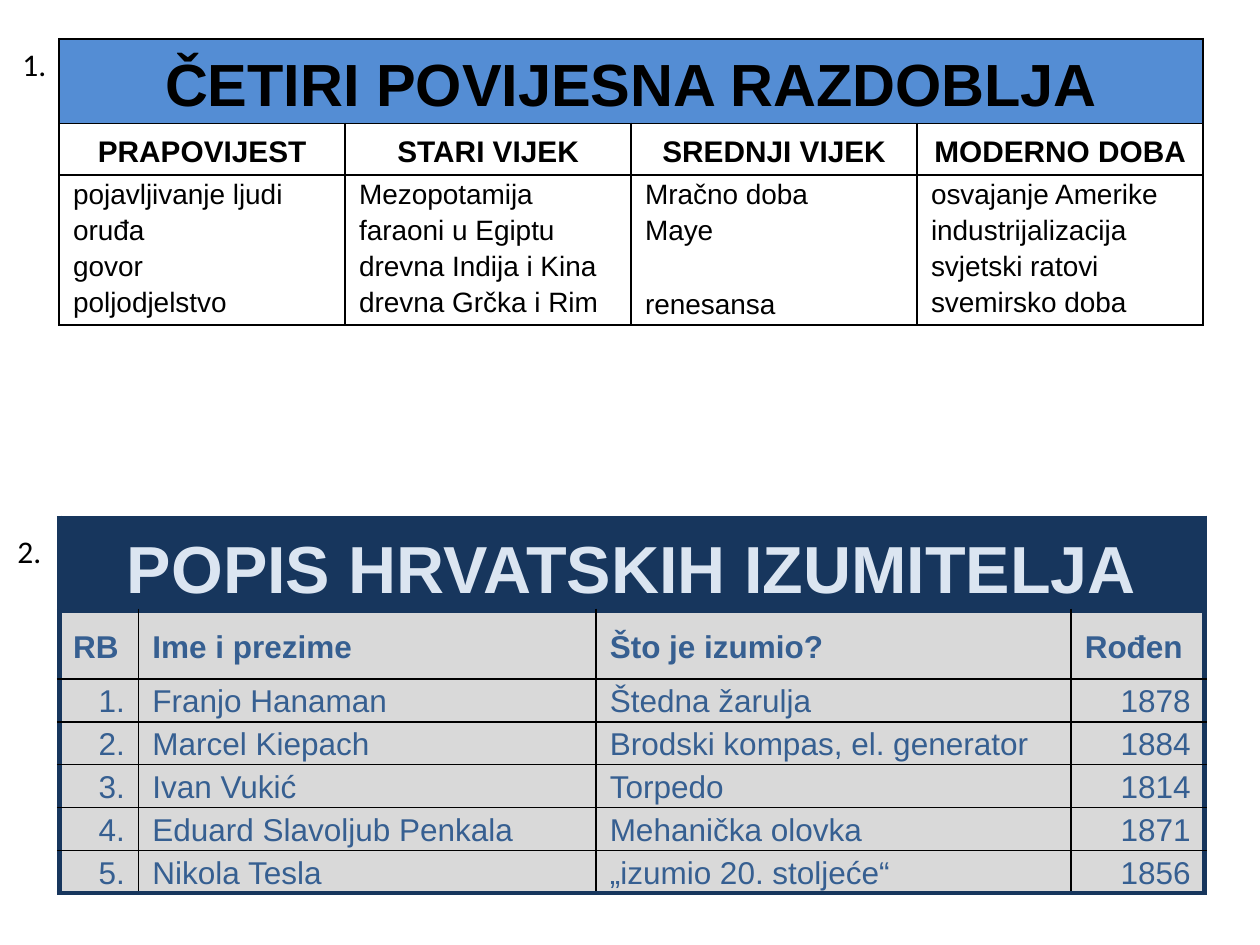
from pptx import Presentation
from pptx.dml.color import RGBColor
from pptx.enum.text import MSO_ANCHOR as Anchor, PP_ALIGN as Align
from pptx.oxml.ns import qn
from pptx.util import Inches, Pt
from lxml.etree import SubElement as Sub

BLACK = "000000"
NAVY = "17365D"
GRAY = "D9D9D9"
THIN = (BLACK, 1)

ERAS = [
    ["ČETIRI POVIJESNA RAZDOBLJA"],
    ["PRAPOVIJEST", "STARI VIJEK", "SREDNJI VIJEK", "MODERNO DOBA"],
    ["pojavljivanje ljudi\noruđa\ngovor\npoljodjelstvo",
     "Mezopotamija\nfaraoni u Egiptu\ndrevna Indija i Kina\ndrevna Grčka i Rim",
     "Mračno doba\nMaye\nrenesansa",
     "osvajanje Amerike\nindustrijalizacija\nsvjetski ratovi\nsvemirsko doba"],
]
MAKERS = [
    ["POPIS HRVATSKIH IZUMITELJA"],
    ["RB", "Ime i prezime", "Što je izumio?", "Rođen"],
    ["1.", "Franjo Hanaman", "Štedna žarulja", "1878"],
    ["2.", "Marcel Kiepach", "Brodski kompas, el. generator", "1884"],
    ["3.", "Ivan Vukić", "Torpedo", "1814"],
    ["4.", "Eduard Slavoljub Penkala", "Mehanička olovka", "1871"],
    ["5.", "Nikola Tesla", "„izumio 20. stoljeće“", "1856"],
]


def rgb(code):
    return RGBColor.from_string(code)


def style(font, size, color, bold=False, name="Arial"):
    font.name = name
    font.size = Pt(size)
    font.bold = bold
    font.color.rgb = rgb(color)


def add_edges(cell, lines):
    """Draw the left, right, top and bottom border, in that order."""
    props = cell._tc.get_or_add_tcPr()
    for side, (color, width) in zip("LRTB", lines):
        line = Sub(props, qn(f"a:ln{side}"), w=str(Pt(width)))
        fill = Sub(line, qn("a:solidFill"))
        Sub(fill, qn("a:srgbClr"), val=color)


def paint(cell, color):
    if color:
        cell.fill.solid()
        cell.fill.fore_color.rgb = rgb(color)
    else:
        cell.fill.background()


def write(cell, text, look, align, anchor):
    cell.margin_left = cell.margin_right = Inches(0.11)
    cell.margin_top = cell.margin_bottom = 0
    cell.vertical_anchor = anchor
    cell.text_frame.text = text
    for para in cell.text_frame.paragraphs:
        para.alignment = align
        para.line_spacing = 1.15
        for run in para.runs:
            style(run.font, *look)


def add_grid(slide, top, widths, heights, data, looks, fills, aligns, rim, rule):
    """Add a table with a title row, a heading row and body rows.

    looks, fills and aligns hold one entry for each of these three kinds;
    rim is the outer border and rule the one below the title.
    """
    rows, cols = len(heights), len(widths)
    frame = slide.shapes.add_table(rows, cols, Inches(0.47), Inches(top),
                                   Inches(sum(widths)), Inches(sum(heights)))
    table = frame.table
    table.first_row = table.horz_banding = False
    for col, width in zip(table.columns, widths):
        col.width = Inches(width)
    for row, height in zip(table.rows, heights):
        row.height = Inches(height)
    table.cell(0, 0).merge(table.cell(0, cols - 1))
    for r in range(rows):
        kind = min(r, 2)
        for c in range(cols):
            cell = table.cell(r, c)
            add_edges(cell, [
                rim if c == 0 or r == 0 else THIN,
                rim if c == cols - 1 or r == 0 else THIN,
                rim if r == 0 else rule if r == 1 else THIN,
                rule if r == 0 else rim if r == rows - 1 else THIN])
            paint(cell, fills[kind])
            if c < len(data[r]):
                write(cell, data[r][c], looks[kind], aligns[kind][c],
                      Anchor.TOP if kind == 2 else Anchor.MIDDLE)
    return table


def add_mark(slide, left, top, text):
    box = slide.shapes.add_textbox(Inches(left), Inches(top), Inches(0.39), Inches(0.4))
    box.text_frame.word_wrap = True
    box.text_frame.text = text
    style(box.text_frame.paragraphs[0].runs[0].font, 18, BLACK, name="Calibri")


def main():
    deck = Presentation()
    deck.slide_width, deck.slide_height = Inches(10), Inches(7.5)
    slide = deck.slides.add_slide(deck.slide_layouts[6])
    mid, left, right = [Align.CENTER] * 4, [Align.LEFT] * 4, Align.RIGHT

    eras = add_grid(
        slide, 0.31, [2.27] * 4, [0.67, 0.41, 1.19], ERAS,
        looks=[(34, BLACK, True), (17, BLACK, True), (16, BLACK)],
        fills=["548DD4", None, None], aligns=[mid, mid, left],
        rim=(BLACK, 1.5), rule=THIN)
    eras.cell(2, 2).text_frame.paragraphs[2].space_before = Pt(22)

    add_grid(
        slide, 4.11, [0.63, 3.63, 3.77, 1.06], [0.74, 0.54] + [0.34] * 5, MAKERS,
        looks=[(38, "DBE5F1", True), (18, "365F91", True), (18, "365F91")],
        fills=[NAVY, GRAY, GRAY],
        aligns=[mid, left, [right, Align.LEFT, Align.LEFT, right]],
        rim=(NAVY, 3), rule=(NAVY, 3))

    add_mark(slide, 0.08, 0.31, "1.")
    add_mark(slide, 0.04, 4.17, "2.")
    deck.save("out.pptx")


if __name__ == "__main__":
    main()
